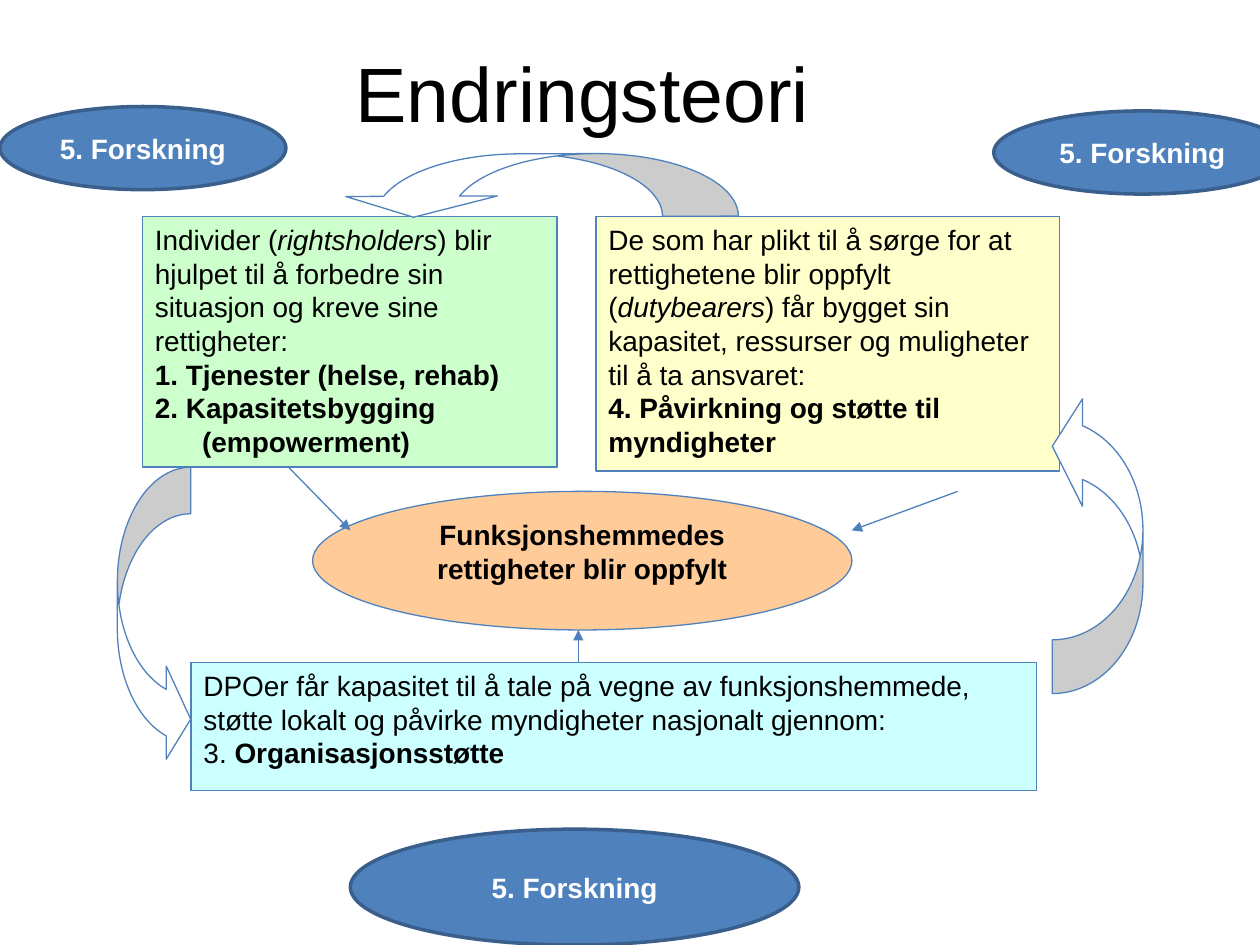
from pptx import Presentation
from pptx import util as u
from pptx.dml.color import RGBColor
from pptx.enum import shapes, text
from pptx.oxml import parse_xml
from pptx.oxml.ns import nsdecls, qn

BLACK = RGBColor(0x00, 0x00, 0x00)
WHITE = RGBColor(0xFF, 0xFF, 0xFF)
BLUE = RGBColor(0x4F, 0x81, 0xBD)
DARK_BLUE = RGBColor(0x3A, 0x5F, 0x8C)
ORANGE = RGBColor(0xFF, 0xCC, 0x99)
GREEN = RGBColor(0xCC, 0xFF, 0xCC)
YELLOW = RGBColor(0xFF, 0xFF, 0xCC)
CYAN = RGBColor(0xCC, 0xFF, 0xFF)
LEFT, CENTER = text.PP_ALIGN.LEFT, text.PP_ALIGN.CENTER
TOP, MIDDLE = text.MSO_ANCHOR.TOP, text.MSO_ANCHOR.MIDDLE
KIND = shapes.MSO_SHAPE


def write(frame, paragraphs, size=16, color=BLACK, align=LEFT, anchor=TOP, hanging=0):
    frame.word_wrap = True
    frame.auto_size = text.MSO_AUTO_SIZE.NONE
    frame.vertical_anchor = anchor
    for number, runs in enumerate(paragraphs):
        paragraph = frame.add_paragraph() if number else frame.paragraphs[0]
        paragraph.alignment = align
        if hanging and number:
            properties = paragraph._p.get_or_add_pPr()
            properties.set("marL", str(u.Pt(hanging)))
            properties.set("indent", str(-u.Pt(hanging)))
        for words, style in runs:
            run = paragraph.add_run()
            run.text = words
            run.font.name = "Arial"
            run.font.size = u.Pt(size)
            run.font.color.rgb = color
            run.font.bold = style == "bold"
            run.font.italic = style == "italic"


def draw(kind, bounds, fill, line=BLUE, width=0.75):
    shape = slide.shapes.add_shape(kind, *map(u.Pt, bounds))
    shape.shadow.inherit = False
    shape.fill.solid()
    shape.fill.fore_color.rgb = fill
    shape.line.color.rgb = line
    shape.line.width = u.Pt(width)
    return shape


deck = Presentation()
deck.slide_width, deck.slide_height = u.Pt(720), u.Pt(540)
slide = deck.slides.add_slide(deck.slide_layouts[5])

title = slide.shapes.title
title.left, title.top, title.width, title.height = map(u.Pt, (0, 29.5, 666, 45.4))
write(title.text_frame, [[("Endringsteori", "")]], size=44, align=CENTER, anchor=MIDDLE)

goal = draw(KIND.OVAL, (178.6, 280.8, 308.2, 79.2), ORANGE)
write(goal.text_frame, [[("Funksjonshemmedes rettigheter blir oppfylt", "bold")]], align=CENTER)

actors = [
    ((81.4, 123.8, 236.9, 143.1), GREEN, 27, [
        [("Individer (", ""), ("rightsholders", "italic"),
         (") blir hjulpet til å forbedre sin situasjon og kreve sine rettigheter:", "")],
        [("1. Tjenester (helse, rehab)", "bold")],
        [("2. Kapasitetsbygging (empowerment)", "bold")],
    ]),
    ((340.6, 123.8, 265, 145.4), YELLOW, 0, [
        [("De som har plikt til å sørge for at rettighetene blir oppfylt (", ""),
         ("dutybearers", "italic"),
         (") får bygget sin kapasitet, ressurser og muligheter til å ta ansvaret:", "")],
        [("4. Påvirkning og støtte til myndigheter", "bold")],
    ]),
    ((109.2, 378.5, 483.1, 73.4), CYAN, 0, [
        [("DPOer får kapasitet til å tale på vegne av funksjonshemmede, "
          "støtte lokalt og påvirke myndigheter nasjonalt gjennom:", "")],
        [("3. ", ""), ("Organisasjonsstøtte", "bold")],
    ]),
]
for bounds, fill, hanging, paragraphs in actors:
    actor = draw(KIND.RECTANGLE, bounds, fill)
    write(actor.text_frame, paragraphs, hanging=hanging)

contributions = [
    (330.5, 378.5, 330.5, 360),
    (164.9, 267, 200.2, 303.1),
    (547.2, 280.8, 486.7, 303.1),
]
for ends in contributions:
    contribution = slide.shapes.add_connector(shapes.MSO_CONNECTOR.STRAIGHT, *map(u.Pt, ends))
    contribution.line.color.rgb = BLUE
    contribution.line.width = u.Pt(0.75)
    contribution.line._get_or_add_ln().append(
        parse_xml(f'<a:tailEnd {nsdecls("a")} type="triangle"/>'))
    contribution._element.find(qn("p:spPr")).append(
        parse_xml(f'<a:effectLst {nsdecls("a")}/>'))

influences = [
    (KIND.CURVED_RIGHT_ARROW, (67.1, 267, 41.9, 170.6), 0, (0.635, 1.27)),
    (KIND.CURVED_UP_ARROW, (541.2, 284.4, 172, 51.8), 270, (0.593, 1.185)),
    (KIND.CURVED_RIGHT_ARROW, (289.4, -8.6, 36, 229), 89.8, (1.204, 2.407)),
]
for kind, bounds, rotation, proportions in influences:
    influence = draw(kind, bounds, WHITE)
    influence.rotation = rotation
    for index, proportion in enumerate((*proportions, 0.333)):
        influence.adjustments[index] = proportion

research_places = [
    (200.2, 473.8, 256.3, 66.2),
    (567.9, 63.4, 169.9, 47.5),
    (0, 60.9, 163.4, 47.5),
]
for bounds in research_places:
    research = draw(KIND.OVAL, bounds, BLUE, line=DARK_BLUE, width=2)
    write(research.text_frame, [[("5. Forskning", "bold")]],
          color=WHITE, align=CENTER, anchor=MIDDLE)

deck.save("out.pptx")
